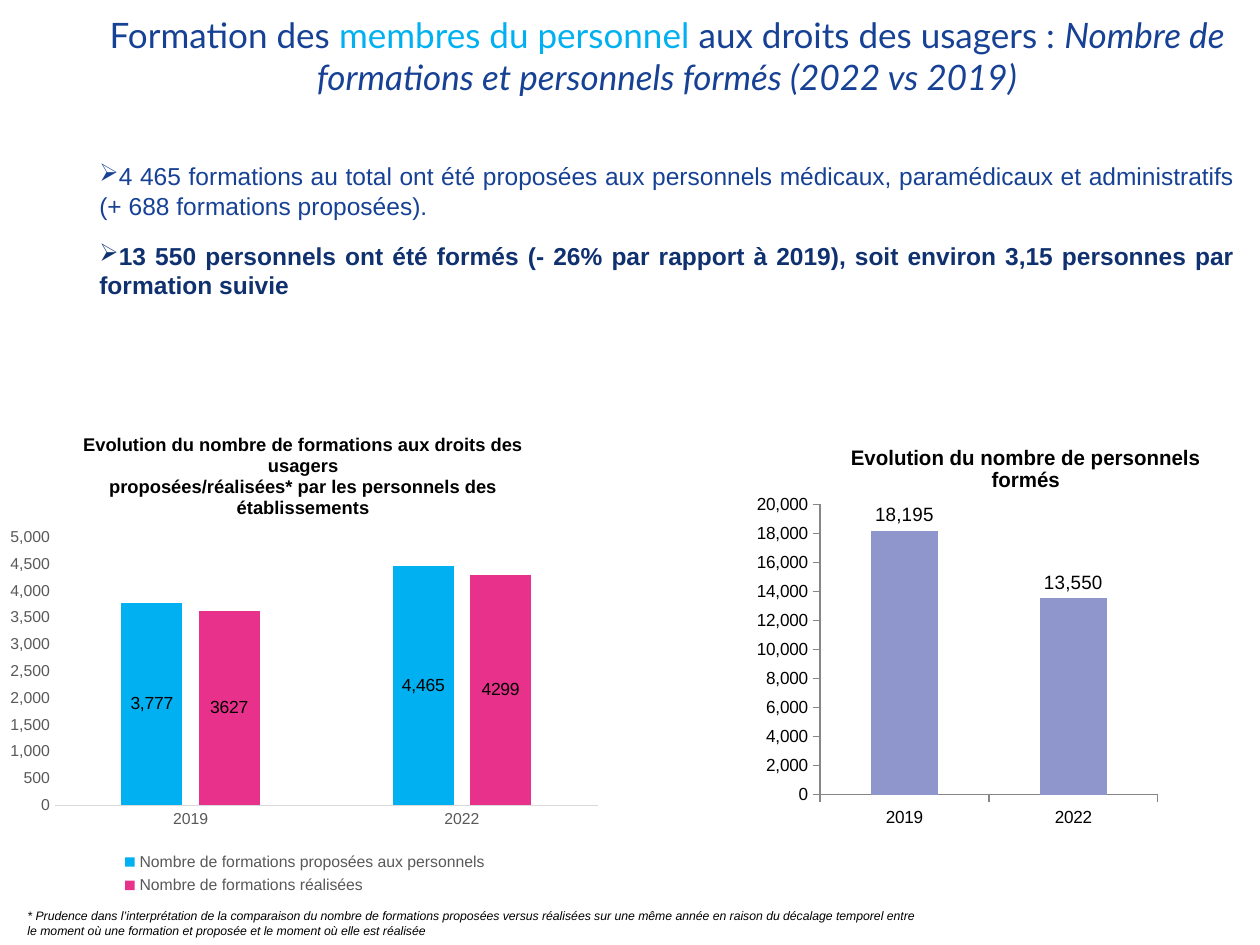
from lxml.etree import SubElement
from pptx import Presentation
from pptx.chart.data import CategoryChartData
from pptx.dml.color import RGBColor
from pptx.enum.chart import XL_CHART_TYPE, XL_LABEL_POSITION, XL_LEGEND_POSITION, XL_TICK_MARK
from pptx.enum.text import MSO_ANCHOR, PP_ALIGN
from pptx.oxml import parse_xml
from pptx.oxml.ns import nsdecls, qn
from pptx.util import Inches, Pt


class Deck:
    """Slide style and builders on a grid of 100 columns by 75 rows."""

    hues = {"blue": "164194", "navy": "10316F", "sky": "00B0F0", "pink": "E8318A",
            "lilac": "8F96CB", "black": "000000", "gray": "595959",
            "pale": "D9D9D9", "line": "868686"}
    cols, rows = 100, 75

    def __init__(self):
        self.prs = Presentation()
        self.prs.slide_width, self.prs.slide_height = Inches(10), Inches(7.5)
        self.slide = self.prs.slides.add_slide(self.prs.slide_layouts[5])

    def box(self, x, y, w, h):
        dx = self.prs.slide_width / self.cols
        dy = self.prs.slide_height / self.rows
        return [int(v) for v in (x * dx, y * dy, w * dx, h * dy)]

    def hue(self, name):
        return RGBColor.from_string(self.hues[name])

    def font(self, font, size, hue="black", bold=False, italic=False, face="Arial"):
        font.name, font.size = face, Pt(size)
        font.bold, font.italic = bold, italic
        font.color.rgb = self.hue(hue)

    def run(self, para, text, size, hue="black", **style):
        run = para.add_run()
        run.text = text
        self.font(run.font, size, hue, **style)

    def title(self, at, runs):
        shape = self.slide.shapes.title
        shape.left, shape.top, shape.width, shape.height = self.box(*at)
        frame = shape.text_frame
        frame.word_wrap, frame.vertical_anchor = True, MSO_ANCHOR.TOP
        frame.margin_top = frame.margin_bottom = 0
        para = frame.paragraphs[0]
        para.alignment = PP_ALIGN.CENTER
        for text, hue, italic in runs:
            self.run(para, text, 20, hue, italic=italic, face="Lato")

    def text(self, at, items, size, mark=None, **style):
        frame = self.slide.shapes.add_textbox(*self.box(*at)).text_frame
        frame.word_wrap = True
        for i, (text, hue, bold) in enumerate(items):
            para = frame.add_paragraph() if i else frame.paragraphs[0]
            if mark:
                props = para._p.get_or_add_pPr()
                props.set("marL", "0")
                props.set("indent", str(-Inches(0.31)))
                SubElement(props, qn("a:buChar")).set("char", mark)
                para.alignment = PP_ALIGN.JUSTIFY
            if i:
                para.space_before = Pt(12)
            self.run(para, text, size, hue, bold=bold, **style)

    def place(self, node, spot, spare):
        old = node.find(qn("c:layout"))
        if old is not None:
            node.remove(old)
        tags = [("xMode", "edge"), ("yMode", "edge"), *zip("xywh", spot)]
        if len(spot) == 4:
            tags.insert(0, ("layoutTarget", "inner"))
        body = "".join(f'<c:{tag} val="{val}"/>' for tag, val in tags)
        node.insert(spare, parse_xml(f'<c:layout {nsdecls("c")}><c:manualLayout>'
                                     f'{body}</c:manualLayout></c:layout>'))

    def axis(self, axis, size, hue, line, tick):
        axis.has_major_gridlines = False
        axis.major_tick_mark, axis.minor_tick_mark = tick, XL_TICK_MARK.NONE
        self.font(axis.tick_labels.font, size, hue)
        if line:
            axis.format.line.color.rgb = self.hue(line)
            axis.format.line.width = Pt(0.75)
        else:
            axis.format.line.fill.background()

    def chart(self, at, head, spots, series, top, gap, lap=0, size=10, hue="black",
              lines=("line", "line"), tick=XL_TICK_MARK.OUTSIDE, mark=10,
              pos=XL_LABEL_POSITION.CENTER, key=False):
        data = CategoryChartData()
        data.categories = ["2019", "2022"]
        for name, vals, _, _ in series:
            data.add_series(name, vals)
        chart = self.slide.shapes.add_chart(
            XL_CHART_TYPE.COLUMN_CLUSTERED, *self.box(*at), data).chart
        self.font(chart.font, 10)
        texts, pts = head
        chart.has_title = True
        frame = chart.chart_title.text_frame
        for i, text in enumerate(texts):
            para = frame.add_paragraph() if i else frame.paragraphs[0]
            self.run(para, text, pts, bold=True)
        chart.chart_title.include_in_layout = False
        self.place(chart.chart_title._element, spots[0], 1)
        self.place(chart._chartSpace.chart.plotArea, spots[1], 0)
        for axis, line in zip((chart.category_axis, chart.value_axis), lines):
            self.axis(axis, size, hue, line, tick)
        axis = chart.value_axis
        axis.minimum_scale, axis.maximum_scale, axis.major_unit = 0, top, top / 10
        axis.tick_labels.number_format = "#,##0"
        axis.tick_labels.number_format_is_linked = False
        plot = chart.plots[0]
        plot.gap_width, plot.overlap, plot.vary_by_categories = gap, lap, False
        for bar, (_, _, fill, form) in zip(plot.series, series):
            bar.format.fill.solid()
            bar.format.fill.fore_color.rgb = self.hue(fill)
            tags = bar.data_labels
            tags.show_value, tags.position = True, pos
            tags.number_format, tags.number_format_is_linked = form, False
            self.font(tags.font, mark)
        chart.has_legend = key
        if key:
            chart.legend.position = XL_LEGEND_POSITION.BOTTOM
            chart.legend.include_in_layout = False
            self.font(chart.legend.font, 9, "gray")


def main():
    deck = Deck()
    deck.title((5.9, 1.1, 94.1, 10.1), [
        ("Formation des ", "blue", False),
        ("membres du personnel ", "sky", False),
        ("aux droits des usagers : ", "blue", False),
        ("Nombre de formations et personnels formés (2022 vs 2019)", "blue", True)])
    deck.text((6.9, 12.3, 92.1, 12.1), [
        ("4 465 formations au total ont été proposées aux personnels médicaux, "
         "paramédicaux et administratifs (+ 688 formations proposées).", "blue", False),
        ("13 550 personnels ont été formés (- 26% par rapport à 2019), soit environ "
         "3,15 personnes par formation suivie", "navy", True)], 14, mark="➢")
    deck.chart((0, 32, 48.4, 39.4),
               (["Evolution du nombre de formations aux droits des usagers",
                 "proposées/réalisées* par les personnels des établissements"], 10.5),
               [(0.13, 0.05), (0.09, 0.27, 0.89, 0.54)],
               [("Nombre de formations proposées aux personnels", (3777, 4465),
                 "sky", "#,##0"),
                ("Nombre de formations réalisées", (3627, 4299), "pink", "General")],
               5000, 219, lap=-27, size=9, hue="gray", lines=("pale", None),
               tick=XL_TICK_MARK.NONE, key=True)
    deck.chart((59, 33.6, 36.6, 33.9),
               (["Evolution du nombre de personnels formés"], 12),
               [(0.23, 0.04), (0.17, 0.19, 0.75, 0.68)],
               [("Series 1", (18195, 13550), "lilac", "#,##0")],
               20000, 150, mark=11, pos=XL_LABEL_POSITION.OUTSIDE_END)
    deck.text((1.2, 71.6, 72.4, 3.4), [
        ("* Prudence dans l’interprétation de la comparaison du nombre de formations "
         "proposées versus réalisées sur une même année en raison du décalage temporel "
         "entre le moment où une formation et proposée et le moment où elle est réalisée",
         "black", False)], 7, italic=True)
    deck.prs.save("out.pptx")


if __name__ == "__main__":
    main()
